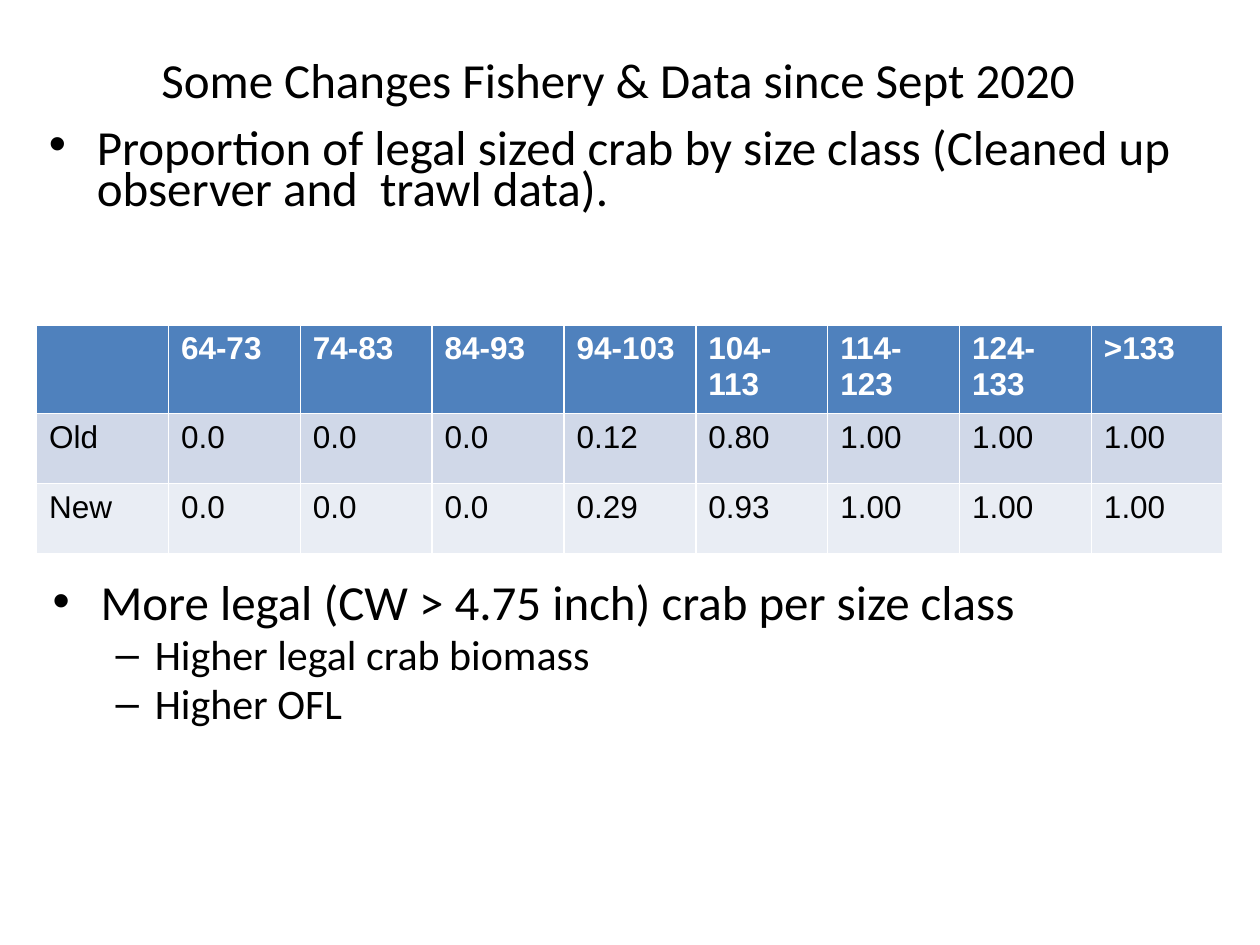
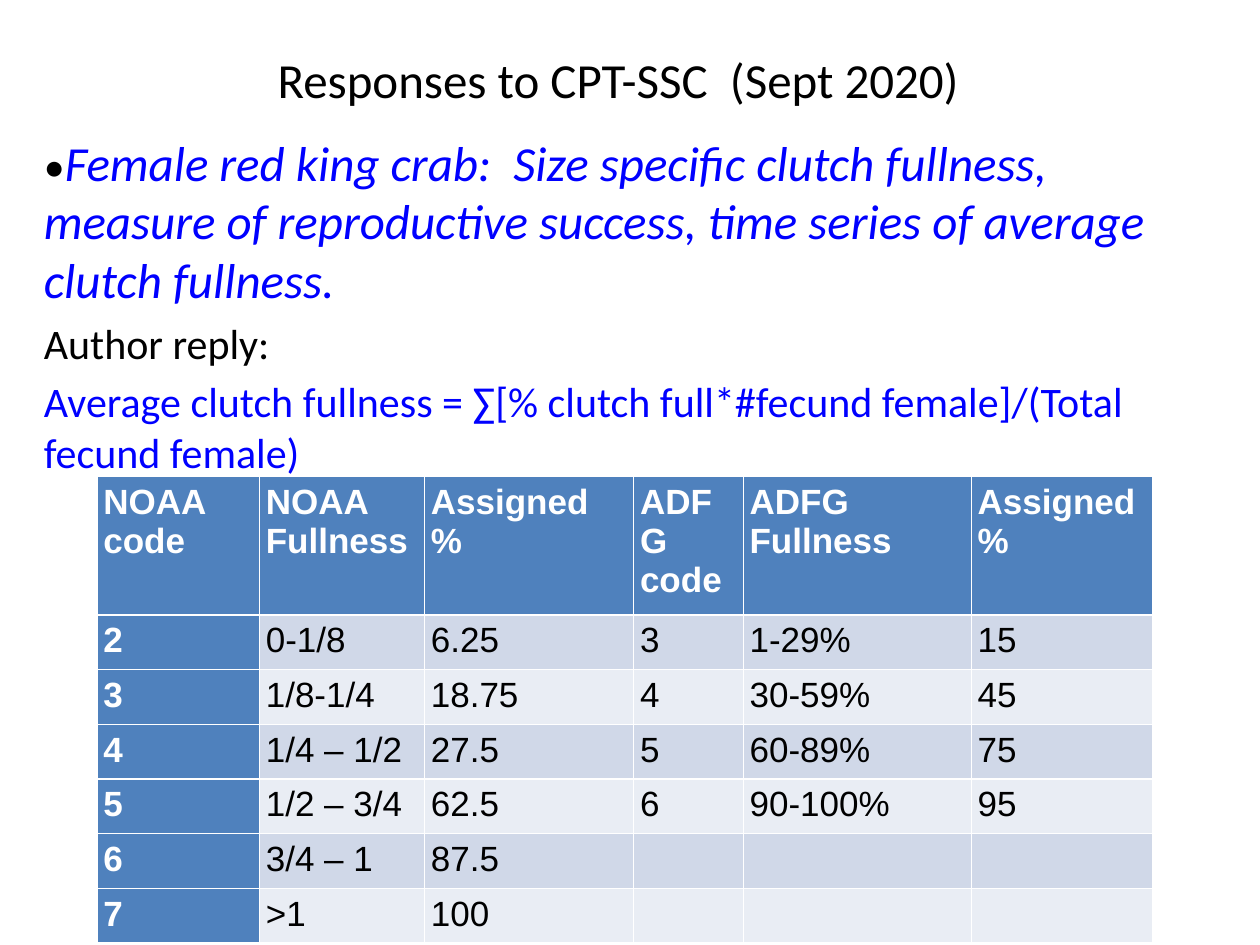
from typing import NamedTuple

from lxml.etree import SubElement
from pptx import Presentation
from pptx.dml.color import RGBColor
from pptx.enum.text import MSO_ANCHOR as Anchor, PP_ALIGN as Align
from pptx.oxml.ns import qn
from pptx.util import Inches, Pt

SLIDE_WIDTH, SLIDE_HEIGHT = Inches(10), Inches(7.5)
COLUMN, ROW = SLIDE_WIDTH / 100, SLIDE_HEIGHT / 75
COLORS = {
    "text": "000000",
    "accent": "0000FF",
    "header": "4F81BD",
    "header_text": "FFFFFF",
    "odd_row": "D0D8E8",
    "even_row": "E9EDF4",
}
TITLE_ONLY = 5
MAIN_SIZE, SUB_SIZE = 28, 24
BULLETS = [("•", 3.8, -3.8), ("–", 8.1, -3.1)]

SIZE_CLASSES = [
    ["", "64-73", "74-83", "84-93", "94-103", "104-113", "114-123", "124-133", ">133"],
    ["Old", "0.0", "0.0", "0.0", "0.12", "0.80", "1.00", "1.00", "1.00"],
    ["New", "0.0", "0.0", "0.0", "0.29", "0.93", "1.00", "1.00", "1.00"],
]
CLUTCH_CODES = [
    ["NOAA\ncode", "NOAA\nFullness", "Assigned %", "ADFG\ncode", "ADFG\nFullness", "Assigned %"],
    ["2", "0-1/8", "6.25", "3", "1-29%", "15"],
    ["3", "1/8-1/4", "18.75", "4", "30-59%", "45"],
    ["4", "1/4 – 1/2", "27.5", "5", "60-89%", "75"],
    ["5", "1/2 – 3/4", "62.5", "6", "90-100%", "95"],
    ["6", "3/4 – 1", "87.5", "", "", ""],
    ["7", ">1", "100", "", "", ""],
]


class Box(NamedTuple):
    """Left, top, width and height in grid columns and rows."""
    left: float
    top: float
    width: float
    height: float

    def emu(self):
        """Return the box in slide units."""
        return (int(self.left * COLUMN), int(self.top * ROW),
                int(self.width * COLUMN), int(self.height * ROW))


def set_font(font, size, color="text", name="Calibri", bold=False, italic=False):
    """Apply one complete text style."""
    font.name, font.size, font.bold, font.italic = name, Pt(size), bold, italic
    font.color.rgb = RGBColor.from_string(COLORS[color])


def add_titled_slide(deck, heading):
    """Add a slide with the shared title style."""
    slide = deck.slides.add_slide(deck.slide_layouts[TITLE_ONLY])
    title = slide.shapes.title
    title.left, title.top, title.width, title.height = Box(2.5, 2.5, 93.1, 7.5).emu()
    title.text_frame.text = heading
    title.text_frame.vertical_anchor = Anchor.MIDDLE
    paragraph = title.text_frame.paragraphs[0]
    paragraph.alignment = Align.CENTER
    set_font(paragraph.font, MAIN_SIZE)
    return slide


def add_paragraphs(slide, box, texts):
    """Add a wrapping text region and return its paragraphs."""
    frame = slide.shapes.add_textbox(*box.emu()).text_frame
    frame.word_wrap = True
    frame.text = "\n".join(texts)
    return frame.paragraphs


def add_bullets(slide, box, points, line_spacing):
    """Add a list of (level, text) points."""
    paragraphs = add_paragraphs(slide, box, [text for _, text in points])
    for paragraph, (level, _) in zip(paragraphs, points):
        size = SUB_SIZE if level else MAIN_SIZE
        symbol, margin, indent = BULLETS[level]
        paragraph.level = level
        paragraph.line_spacing = line_spacing
        paragraph.space_before = Pt(size * 0.2)
        properties = paragraph._p.get_or_add_pPr()
        properties.set("marL", str(int(margin * COLUMN)))
        properties.set("indent", str(int(indent * COLUMN)))
        SubElement(properties, qn("a:buFont"), typeface="Arial")
        SubElement(properties, qn("a:buChar"), char=symbol)
        set_font(paragraph.font, size)


def add_data_table(slide, box, rows, widths, heights, size, inset=None, header_column=False):
    """Add a banded table with a header row and optional header column."""
    table = slide.shapes.add_table(len(rows), len(widths), *box.emu()).table
    table.first_col = header_column
    for column, width in zip(table.columns, widths):
        column.width = int(width * COLUMN)
    for r, (values, height) in enumerate(zip(rows, heights)):
        table.rows[r].height = int(height * ROW)
        band = "odd_row" if r % 2 else "even_row"
        for c, value in enumerate(values):
            is_header = r == 0 or (header_column and c == 0)
            cell = table.cell(r, c)
            cell.text = value
            cell.fill.solid()
            cell.fill.fore_color.rgb = RGBColor.from_string(
                COLORS["header" if is_header else band])
            if inset is not None:
                cell.margin_left = cell.margin_right = int(inset * COLUMN)
                cell.margin_top = cell.margin_bottom = int(inset * ROW)
            for paragraph in cell.text_frame.paragraphs:
                set_font(paragraph.font, size, "header_text" if is_header else "text",
                         "Arial", bold=is_header)


def add_reply(slide, box, request, reply, formula):
    """Add the review request, the reply label and the formula."""
    opening, label, equation = add_paragraphs(slide, box, ["", reply, formula])
    for paragraph, size in zip((opening, label, equation), (MAIN_SIZE, SUB_SIZE, SUB_SIZE)):
        paragraph.space_before = Pt(size * 0.2)
    for text, size, color, italic in [("•", SUB_SIZE, "text", False),
                                      (request, MAIN_SIZE, "accent", True)]:
        run = opening.add_run()
        run.text = text
        set_font(run.font, size, color, italic=italic)
    set_font(label.font, SUB_SIZE)
    set_font(equation.font, SUB_SIZE, "accent")


def build_changes_slide(deck):
    """Build the slide on legal crab by size class."""
    slide = add_titled_slide(deck, "Some Changes Fishery & Data since Sept 2020")
    add_bullets(slide, Box(2.9, 10, 94.2, 8.3), [
        (0, "Proportion of legal sized crab by size class (Cleaned up observer and  trawl data)."),
    ], 0.7)
    area = Box(2.9, 25.8, 94.2, 16.7)
    classes = len(SIZE_CLASSES[0])
    add_data_table(slide, area, SIZE_CLASSES, [area.width / classes] * classes,
                   [area.height / len(SIZE_CLASSES)] * len(SIZE_CLASSES), 18)
    add_bullets(slide, Box(3.2, 45.8, 94.2, 24.2), [
        (0, "More legal (CW > 4.75 inch) crab per size class"),
        (1, "Higher legal crab biomass"),
        (1, "Higher OFL"),
    ], 0.8)


def build_responses_slide(deck):
    """Build the slide on clutch fullness."""
    slide = add_titled_slide(deck, "Responses to CPT-SSC  (Sept 2020)")
    add_reply(
        slide, Box(2.5, 10, 94.2, 28.4),
        "Female red king crab:  Size specific clutch fullness, measure of reproductive "
        "success, time series of average clutch fullness.",
        "Author reply:",
        "Average clutch fullness = ∑[% clutch full*#fecund female]/(Total fecund female)")
    add_data_table(slide, Box(7.7, 37.8, 83.9, 33.7), CLUTCH_CODES,
                   [12.9, 13.1, 16.6, 8.7, 18.1, 14.4],
                   [7.7] + [4.3] * (len(CLUTCH_CODES) - 1), 20, inset=0.5, header_column=True)


def main():
    """Build and save the deck."""
    deck = Presentation()
    deck.slide_width, deck.slide_height = SLIDE_WIDTH, SLIDE_HEIGHT
    build_changes_slide(deck)
    build_responses_slide(deck)
    deck.save("out.pptx")


if __name__ == "__main__":
    main()
